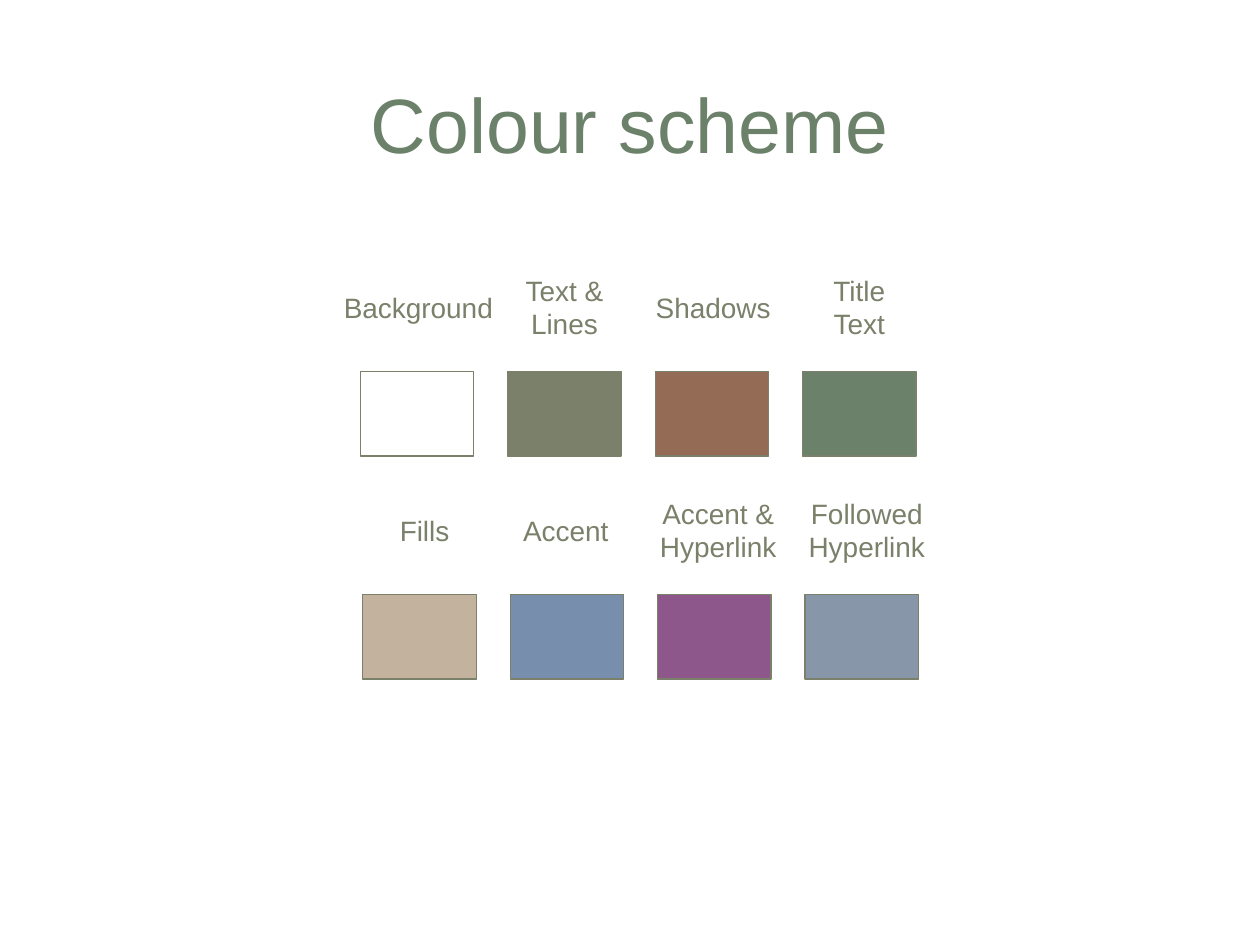
from pptx import Presentation
from pptx.dml.color import RGBColor
from pptx.enum.shapes import MSO_SHAPE
from pptx.enum.text import MSO_ANCHOR, MSO_AUTO_SIZE, PP_ALIGN
from pptx.util import Inches, Pt

RECTANGLE = MSO_SHAPE.RECTANGLE
MIDDLE = MSO_ANCHOR.MIDDLE
FIT_SHAPE = MSO_AUTO_SIZE.SHAPE_TO_FIT_TEXT
CENTER = PP_ALIGN.CENTER

FONT = "Arial"
BACKGROUND = "FFFFFF"
TEXT_AND_LINES = "7A806A"
TITLE_TEXT = "6C816A"
SWATCH_WIDTH, SWATCH_HEIGHT, SWATCH_STEP = 0.9, 0.67, 1.17

SCHEME_ROWS = [
    (2.86, 2.95, [
        (["Background"], 3.32, 1.39, BACKGROUND),
        (["Text &", "Lines"], 4.48, 0.84, TEXT_AND_LINES),
        (["Shadows"], 5.66, 1.12, "946C56"),
        (["Title\nText"], 6.82, 0.63, TITLE_TEXT),
    ]),
    (2.88, 4.72, [
        (["Fills"], 3.37, 0.6, "C3B29D"),
        (["Accent"], 4.49, 0.88, "778EAC"),
        (["Accent &", "Hyperlink"], 5.7, 1.13, "8E578B"),
        (["Followed", "Hyperlink"], 6.88, 1.13, "8896A9"),
    ]),
]


def rgb(value):
    return RGBColor.from_string(value)


class SchemeSlide:
    def __init__(self, presentation):
        self.slide = presentation.slides.add_slide(presentation.slide_layouts[6])
        background = self.slide.background.fill
        background.solid()
        background.fore_color.rgb = rgb(BACKGROUND)

    def text(self, paragraphs, left, top, width, height, size, color, wrap):
        frame = self.slide.shapes.add_textbox(
            Inches(left), Inches(top), Inches(width), Inches(height)
        ).text_frame
        frame.word_wrap = wrap
        for index, wording in enumerate(paragraphs):
            paragraph = frame.add_paragraph() if index else frame.paragraphs[0]
            paragraph.alignment = CENTER
            for number, line in enumerate(wording.split("\n")):
                if number:
                    paragraph.add_line_break()
                run = paragraph.add_run()
                run.text = line
                run.font.name = FONT
                run.font.size = Pt(size)
                run.font.color.rgb = rgb(color)
        return frame

    def title(self, wording):
        frame = self.text([wording], 0.5, 0.35, 9, 1.25, 44, TITLE_TEXT, True)
        frame.vertical_anchor = MIDDLE

    def label(self, paragraphs, center, middle, width):
        line_count = len("\n".join(paragraphs).split("\n"))
        height = 0.1 + 0.27 * line_count
        frame = self.text(paragraphs, center - width / 2, middle - height / 2,
                          width, height, 16, TEXT_AND_LINES, False)
        frame.auto_size = FIT_SHAPE

    def swatch(self, left, top, color):
        swatch = self.slide.shapes.add_shape(
            RECTANGLE, Inches(left), Inches(top),
            Inches(SWATCH_WIDTH), Inches(SWATCH_HEIGHT))
        swatch.shadow.inherit = False
        swatch.fill.solid()
        swatch.fill.fore_color.rgb = rgb(color)
        swatch.line.color.rgb = rgb(TEXT_AND_LINES)
        swatch.line.width = Pt(0.75)


def main():
    presentation = Presentation()
    presentation.slide_width = Inches(10)
    presentation.slide_height = Inches(7.5)
    scheme = SchemeSlide(presentation)
    scheme.title("Colour scheme")
    for left, top, roles in SCHEME_ROWS:
        for column, (role, center, width, color) in enumerate(roles):
            scheme.swatch(left + column * SWATCH_STEP, top, color)
            scheme.label(role, center, top - 0.51, width)
    presentation.save("out.pptx")


if __name__ == "__main__":
    main()
